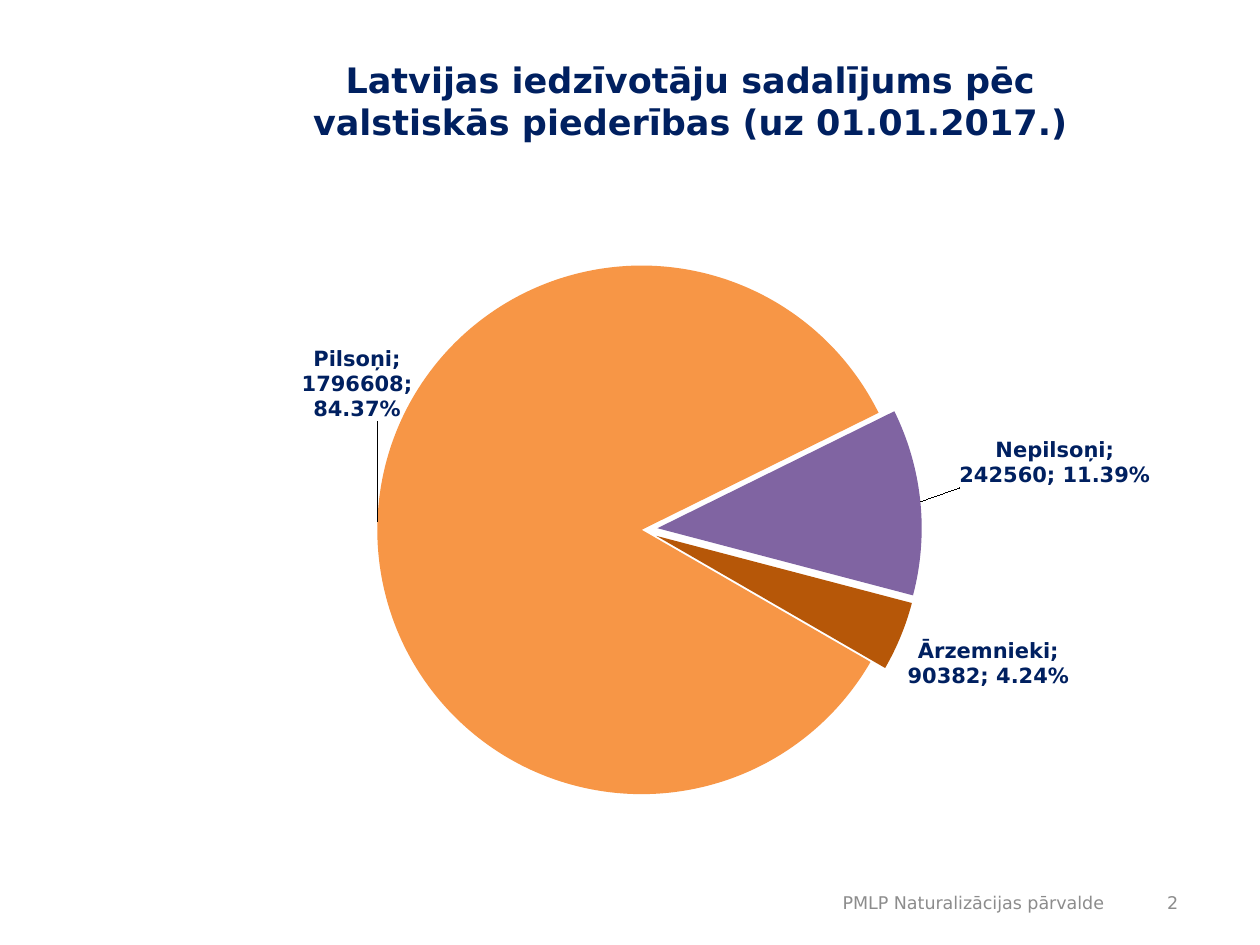
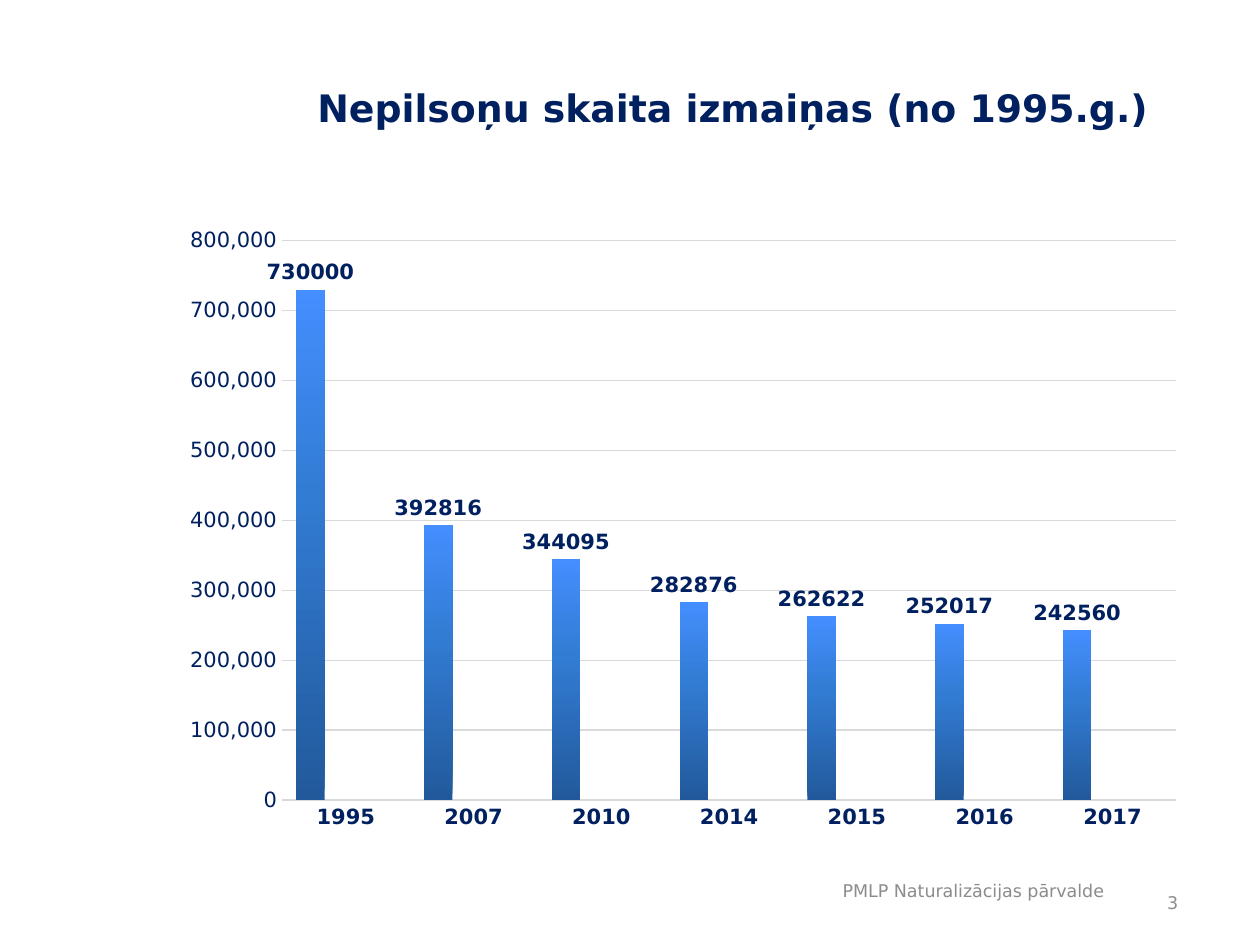
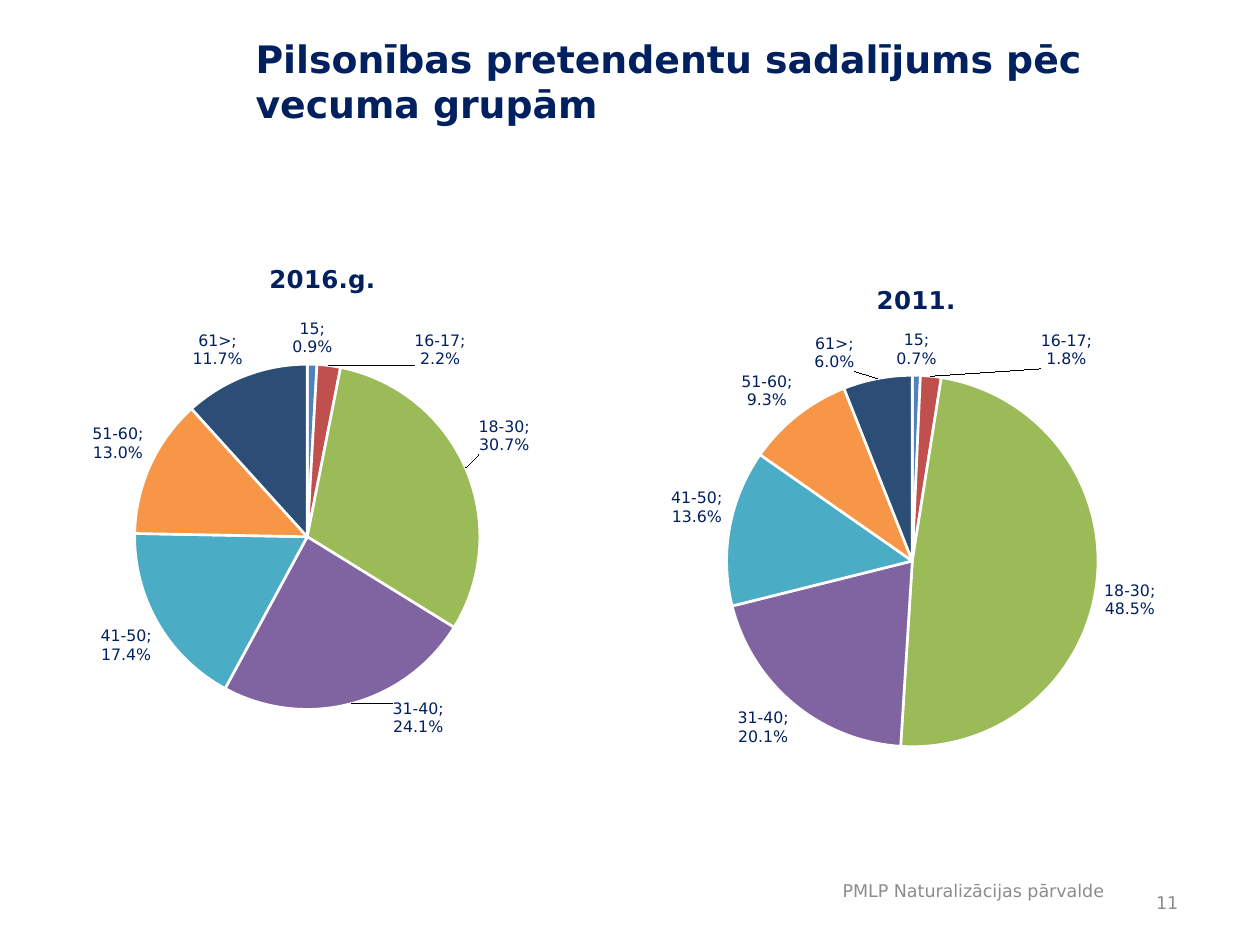
"""Build three slides on Latvian residents, non-citizens and applicants by age."""
from dataclasses import dataclass
from typing import NamedTuple

from pptx import Presentation
from pptx.chart.chart import Chart
from pptx.chart.data import CategoryChartData
from pptx.dml.color import RGBColor
from pptx.enum.chart import XL_CHART_TYPE, XL_LABEL_POSITION, XL_TICK_MARK
from pptx.enum.text import MSO_ANCHOR, PP_ALIGN
from pptx.oxml import parse_xml
from pptx.oxml.ns import nsdecls
from pptx.slide import Slide
from pptx.util import Inches, Pt

PIE = XL_CHART_TYPE.PIE
COLUMN = XL_CHART_TYPE.COLUMN_CLUSTERED
OUT_END = XL_LABEL_POSITION.OUTSIDE_END
NO_TICK = XL_TICK_MARK.NONE
LEFT, CENTER, RIGHT = PP_ALIGN.LEFT, PP_ALIGN.CENTER, PP_ALIGN.RIGHT
MIDDLE, BOTTOM = MSO_ANCHOR.MIDDLE, MSO_ANCHOR.BOTTOM


@dataclass(frozen=True)
class Theme:
    """Hold the colours, font and type sizes."""
    face: str = "DejaVu Sans"
    navy: str = "002060"
    gray: str = "8C8C8C"
    black: str = "000000"
    white: str = "FFFFFF"
    rule: str = "D9D9D9"
    ages: tuple = ("4F81BD", "C0504D", "9BBB59", "8064A2", "4BACC6", "F79646", "2C4D75")
    status: tuple = ("F79646", "4BACC6", "8064A2", "B65708")
    fades: tuple = (
        ("22599B", "327CD4", "448EFF"),
        ("74972C", "A0CF3F", "BAF94D"),
        ("1D87A4", "2BBAE0", "49D2FF"),
    )
    head: float = 20
    large: float = 21.6
    year: float = 14
    label: float = 12
    small: float = 10
    age: float = 9


class Box(NamedTuple):
    """Give a place: inches on a slide, shares in a chart."""
    left: float
    top: float
    width: float
    height: float


class Page(NamedTuple):
    """Describe the title and footer of a slide."""
    title: str
    box: Box
    size: float
    align: PP_ALIGN
    number: str
    foot: float


class Pie(NamedTuple):
    """Describe one pie of age groups."""
    year: str
    box: Box
    plot: Box
    head: tuple[float, float]
    shares: tuple[float, ...]
    moves: dict[int, tuple[float, float]]


THEME = Theme()
FOOTER = "PMLP Naturalizācijas pārvalde"
STATUS = ("Pilsoņi", "", "Nepilsoņi", "Ārzemnieki")
COUNTS = (1796608, None, 242560, 90382)
YEARS = ("1995", "2007", "2010", "2014", "2015", "2016", "2017")
TOTALS = (730000, 392816, 344095, 282876, 262622, 252017, 242560)
AGES = ("15", "16-17", "18-30", "31-40", "41-50", "51-60", "61>")

PAGES = (
    Page("Latvijas iedzīvotāju sadalījums pēc valstiskās piederības (uz 01.01.2017.)",
         Box(1.97, 0.36, 7.02, 0.82), THEME.head, CENTER, "2", 6.96),
    Page("Nepilsoņu skaita izmaiņas (no 1995.g.)",
         Box(2.42, 0.37, 7.02, 0.71), THEME.large, LEFT, "3", 6.87),
    Page("Pilsonības pretendentu sadalījums pēc vecuma grupām",
         Box(1.93, 0.37, 7.85, 0.68), THEME.large, LEFT, "11", 6.87),
)
PIES = (
    Pie("2016.g.", Box(-0.12, 1.92, 5.17, 4.18), Box(0.23, 0.23, 0.53, 0.66), (0.43, 0.03),
        (0.009, 0.022, 0.307, 0.241, 0.174, 0.13, 0.117),
        {1: (0.13, 0.02), 2: (0.01, -0.02), 3: (0.06, -0.02)}),
    Pie("2011.", Box(4.38, 2, 5.78, 4.23), Box(0.24, 0.23, 0.51, 0.7), (0.44, 0.05),
        (0.007, 0.018, 0.485, 0.201, 0.136, 0.093, 0.06),
        {1: (0.15, 0), 6: (-0.03, 0)}),
)


def style(font, size: float, color: str, bold: bool = False) -> None:
    """Set the face, size, colour and weight of a font."""
    font.name, font.size, font.bold = THEME.face, Pt(size), bold
    font.color.rgb = RGBColor.from_string(color)


def place(box: Box) -> tuple:
    """Turn a box into lengths."""
    return tuple(Inches(side) for side in box)


def write(slide: Slide, text: str, box: Box, size: float, color: str,
          align: PP_ALIGN, anchor: MSO_ANCHOR, bold: bool = False) -> None:
    """Add a wrapped text box."""
    frame = slide.shapes.add_textbox(*place(box)).text_frame
    frame.word_wrap = True
    frame.vertical_anchor = anchor
    frame.text = text
    line = frame.paragraphs[0]
    line.alignment = align
    style(line.runs[0].font, size, color, bold)


def start(deck, page: Page) -> Slide:
    """Add a slide with its title, footer and number."""
    slide = deck.slides.add_slide(deck.slide_layouts[6])
    write(slide, page.title, page.box, page.size, THEME.navy, page.align, BOTTOM, True)
    for text, box in ((FOOTER, Box(5.69, page.foot, 3.17, 0.4)),
                      (page.number, Box(8.98, 6.96, 0.47, 0.4))):
        write(slide, text, box, THEME.small, THEME.gray, RIGHT, MIDDLE)
    return slide


def lay(host, index: int, tags: str) -> None:
    """Give a chart part a manual layout."""
    for old in host.xpath("c:layout"):
        host.remove(old)
    host.insert(index, parse_xml(
        f"<c:layout {nsdecls('c')}><c:manualLayout>{tags}</c:manualLayout></c:layout>"))


def draw(slide: Slide, kind: XL_CHART_TYPE, box: Box, plot: Box,
         names: tuple, rows: tuple) -> Chart:
    """Add a plain chart with a fixed plot area."""
    data = CategoryChartData()
    data.categories = names
    for i, row in enumerate(rows, 1):
        data.add_series(f"Series {i}", row)
    chart = slide.shapes.add_chart(kind, *place(box), data).chart
    chart.has_legend = chart.has_title = False
    style(chart.font, THEME.small, THEME.black)
    tags = '<c:layoutTarget val="inner"/><c:xMode val="edge"/><c:yMode val="edge"/>'
    tags += "".join(f'<c:{tag} val="{val}"/>' for tag, val in zip("xywh", plot))
    lay(chart._chartSpace.xpath("c:chart/c:plotArea")[0], 0, tags)
    return chart


def label(series, size: float, form: str, name: bool = False, part: bool = False) -> None:
    """Show bold labels outside the ends of a series."""
    labels = series.data_labels
    labels.show_value = True
    labels.show_category_name = name
    labels.show_percentage = part
    labels.number_format, labels.number_format_is_linked = form, False
    labels.position = OUT_END
    style(labels.font, size, THEME.navy, True)


def paint(series, colors: tuple, edge: bool) -> None:
    """Fill the slices, with white edges on demand."""
    for i, color in enumerate(colors):
        form = series.points[i].format
        form.fill.solid()
        form.fill.fore_color.rgb = RGBColor.from_string(color)
        if edge:
            form.line.color.rgb = RGBColor.from_string(THEME.white)
            form.line.width = Pt(1.5)
        else:
            form.line.fill.background()


def shift(series, i: int, move: tuple[float, float], flags: tuple) -> None:
    """Move the label of one slice and set what it shows."""
    item = series._element.xpath(f'c:dLbls/c:dLbl[c:idx/@val="{i}"]')[0]
    for flag in flags:
        item.xpath(f"c:{flag}")[0].set("val", "1")
    if any(move):
        lay(item, 1, f'<c:x val="{move[0]}"/><c:y val="{move[1]}"/>')


def show_status(slide: Slide) -> None:
    """Draw the pie of residents by legal status."""
    chart = draw(slide, PIE, Box(1.14, 1.59, 8.41, 5.18), Box(0.18, 0.1, 0.58, 0.81),
                 STATUS, (COUNTS,))
    chart.plots[0].vary_by_categories = True
    turn = chart._chartSpace.xpath("//c:pieChart/c:firstSliceAng")
    if turn:
        turn[0].set("val", "120")
    else:
        chart._chartSpace.xpath("//c:pieChart")[0].append(
            parse_xml(f'<c:firstSliceAng {nsdecls("c")} val="120"/>'))
    series = chart.plots[0].series[0]
    paint(series, THEME.status, False)
    for i in (2, 3):
        point = series._element.xpath(f'c:dPt[c:idx/@val="{i}"]')[0]
        point.xpath("c:spPr")[0].addprevious(
            parse_xml(f'<c:explosion {nsdecls("c")} val="6"/>'))
    label(series, THEME.label, "0.00%", True, True)
    for i, move in ((0, (0.04, -0.21)), (2, (0.03, -0.02))):
        note = series.points[i].data_label
        style(note.font, THEME.label, THEME.navy, True)
        note.position = OUT_END
        shift(series, i, move, ("showCatName", "showPercent"))


def show_trend(slide: Slide) -> None:
    """Draw the columns of non-citizens by year."""
    void = (None,) * len(YEARS)
    chart = draw(slide, COLUMN, Box(1.34, 1.71, 8.16, 4.99), Box(0.11, 0.04, 0.87, 0.89),
                 YEARS, (TOTALS, void, void))
    plot = chart.plots[0]
    plot.vary_by_categories = False
    plot.gap_width, plot.overlap = 100, -24
    for series, fade in zip(plot.series, THEME.fades):
        stops = "".join(f'<a:gs pos="{pos}"><a:srgbClr val="{color}"/></a:gs>'
                        for pos, color in zip((0, 60000, 100000), fade))
        series._element.get_or_add_spPr().append(parse_xml(
            f'<a:gradFill {nsdecls("a")} rotWithShape="1"><a:gsLst>{stops}</a:gsLst>'
            '<a:lin ang="16200000" scaled="0"/></a:gradFill>'))
    label(plot.series[0], THEME.label, "0")
    years, scale = chart.category_axis, chart.value_axis
    for axis, bold in ((years, True), (scale, False)):
        axis.major_tick_mark = axis.minor_tick_mark = NO_TICK
        style(axis.tick_labels.font, THEME.label, THEME.navy, bold)
    scale.minimum_scale, scale.maximum_scale, scale.major_unit = 0, 800000, 100000
    scale.tick_labels.number_format = "#,##0"
    scale.tick_labels.number_format_is_linked = False
    scale.format.line.fill.background()
    for line, width in ((years.format.line, 1), (scale.major_gridlines.format.line, 0.75)):
        line.color.rgb = RGBColor.from_string(THEME.rule)
        line.width = Pt(width)


def show_ages(slide: Slide, pie: Pie) -> None:
    """Draw one pie of applicants by age group."""
    chart = draw(slide, PIE, pie.box, pie.plot, AGES, (pie.shares,))
    chart.plots[0].vary_by_categories = True
    title = chart.chart_title.text_frame
    title.text = pie.year
    style(title.paragraphs[0].runs[0].font, THEME.year, THEME.navy, True)
    lay(chart._chartSpace.xpath("c:chart/c:title")[0], 1,
        '<c:xMode val="edge"/><c:yMode val="edge"/>'
        f'<c:x val="{pie.head[0]}"/><c:y val="{pie.head[1]}"/>')
    series = chart.plots[0].series[0]
    paint(series, THEME.ages, True)
    label(series, THEME.age, "0.0%", True)
    for i, (age, share) in enumerate(zip(AGES, pie.shares)):
        note = series.points[i].data_label
        note.text_frame.text = f"{age};\n{share:.1%}"
        for line in note.text_frame.paragraphs:
            style(line.runs[0].font, THEME.age, THEME.navy)
        note.position = OUT_END
        shift(series, i, pie.moves.get(i, (0, 0)), ("showCatName",))


def main() -> None:
    """Build and save the deck."""
    deck = Presentation()
    deck.slide_width, deck.slide_height = Inches(10), Inches(7.5)
    status, trend, ages = (start(deck, page) for page in PAGES)
    show_status(status)
    show_trend(trend)
    for pie in PIES:
        show_ages(ages, pie)
    deck.save("out.pptx")


if __name__ == "__main__":
    main()
